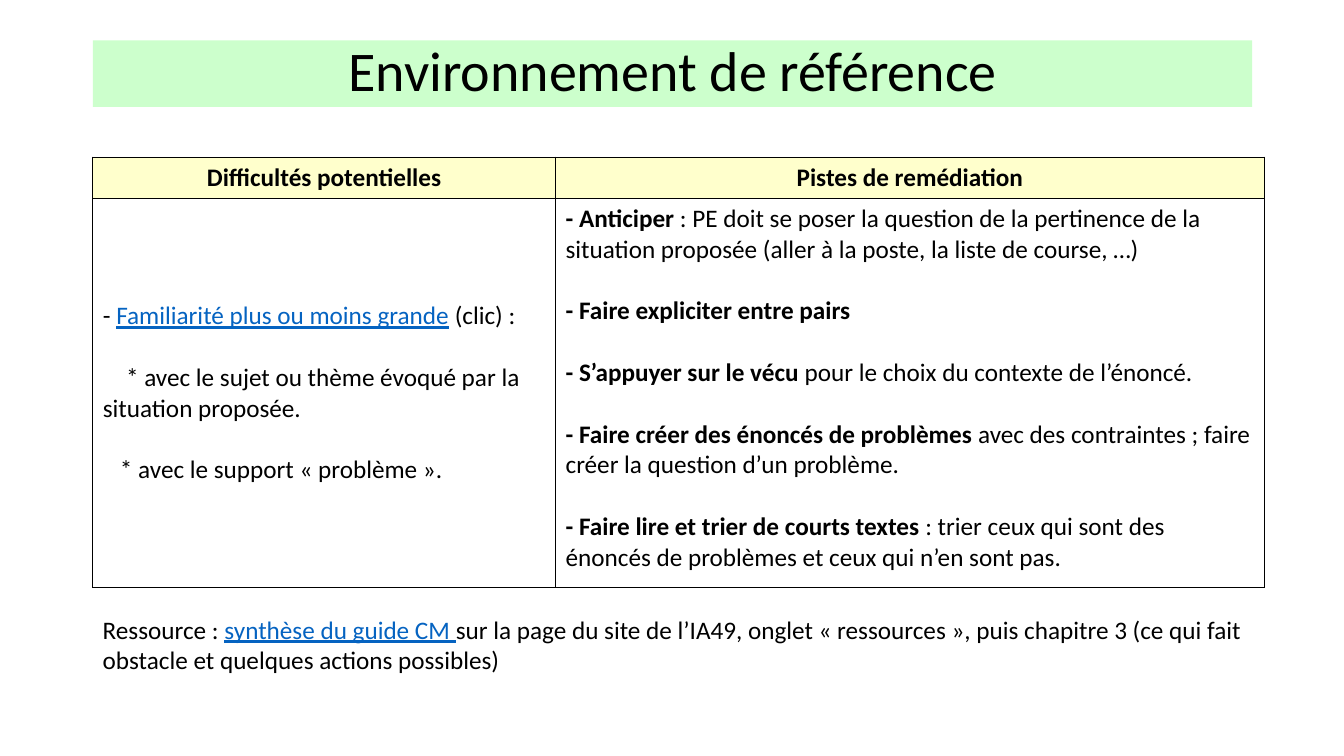
from dataclasses import dataclass

from lxml import etree
from pptx import Presentation
from pptx.dml.color import RGBColor
from pptx.enum.text import MSO_ANCHOR, MSO_AUTO_SIZE, PP_ALIGN
from pptx.oxml.ns import qn
from pptx.util import Inches, Pt

CENTER, LEFT = PP_ALIGN.CENTER, PP_ALIGN.LEFT
MIDDLE, TOP = MSO_ANCHOR.MIDDLE, MSO_ANCHOR.TOP
TITLE_ONLY = 5
COLORS = {"text": "000000", "link": "0563C1", "title": "CCFFCC",
          "header": "FFFFCC", "body": "FFFFFF", "border": "000000"}
FONT = "Calibri"
LEFT_EDGE, WIDTH = 0.92, 11.62
GAP = 22  # points between the items of a cell


@dataclass
class Run:
    text: str
    bold: bool = False
    link: bool = False


@dataclass
class Para:
    runs: list[Run]
    indent: float = 0


@dataclass
class Cell:
    paras: list[Para]
    fill: str = "body"
    align: PP_ALIGN = LEFT
    anchor: MSO_ANCHOR = MIDDLE


def rgb(name: str) -> RGBColor:
    return RGBColor.from_string(COLORS[name])


def header(text: str) -> Cell:
    return Cell([Para([Run(text, bold=True)])], "header", CENTER)


def advice(bold: str, plain: str = "") -> Para:
    return Para([Run(bold, bold=True)] + ([Run(plain)] if plain else []))


def write(tf, paras: list[Para], size: int = 18, align: PP_ALIGN = LEFT) -> None:
    for i, para in enumerate(paras):
        p = tf.add_paragraph() if i else tf.paragraphs[0]
        p.alignment = align
        p.font.name = FONT
        p.space_before = Pt(GAP if i else 0)
        if para.indent:
            p._p.get_or_add_pPr().set("indent", str(Inches(para.indent)))
        for run in para.runs:
            r = p.add_run()
            r.text = run.text
            r.font.size = Pt(size)
            r.font.bold = run.bold
            r.font.underline = run.link
            r.font.color.rgb = rgb("link" if run.link else "text")


def add_borders(cell) -> None:
    tc_pr = cell._tc.get_or_add_tcPr()
    for side in ("lnL", "lnR", "lnT", "lnB"):
        ln = etree.SubElement(tc_pr, qn(f"a:{side}"), w=str(Pt(1)))
        fill = etree.SubElement(ln, qn("a:solidFill"))
        etree.SubElement(fill, qn("a:srgbClr"), val=COLORS["border"])


ROWS = [
    [header("Difficultés potentielles"), header("Pistes de remédiation")],
    [
        Cell([
            Para([Run("- "), Run("Familiarité plus ou moins grande", link=True),
                  Run(" (clic) :")]),
            Para([Run("* avec le sujet ou thème évoqué par la situation proposée.")],
                 indent=0.23),
            Para([Run("* avec le support « problème ».")], indent=0.17),
        ]),
        Cell([
            advice("- Anticiper", " : PE doit se poser la question de la pertinence de la "
                   "situation proposée (aller à la poste, la liste de course, …)"),
            advice("- Faire expliciter entre pairs"),
            advice("- S’appuyer sur le vécu", " pour le choix du contexte de l’énoncé."),
            advice("- Faire créer des énoncés de problèmes",
                   " avec des contraintes ; faire créer la question d’un problème."),
            advice("- Faire lire et trier de courts textes",
                   " : trier ceux qui sont des énoncés de problèmes et ceux qui "
                   "n’en sont pas."),
        ], anchor=TOP),
    ],
]
COL_WIDTHS = [4.59, 7.03]
ROW_HEIGHTS = [0.41, 3.86]
RESOURCE = Para([
    Run("Ressource : "), Run("synthèse du guide CM ", link=True),
    Run("sur la page du site de l’IA49, onglet « ressources », puis chapitre 3 "
        "(ce qui fait obstacle et quelques actions possibles)"),
])


def add_title(s) -> None:
    title = s.shapes.title
    title.left, title.top = Inches(LEFT_EDGE), Inches(0.4)
    title.width, title.height = Inches(11.5), Inches(0.66)
    title.fill.solid()
    title.fill.fore_color.rgb = rgb("title")
    tf = title.text_frame
    tf.auto_size = MSO_AUTO_SIZE.NONE
    tf.vertical_anchor = MIDDLE
    write(tf, [Para([Run("Environnement de référence")])], 40, CENTER)
    tf.paragraphs[0].line_spacing = 0.9


def add_remedies(s) -> None:
    table = s.shapes.add_table(len(ROWS), len(COL_WIDTHS), Inches(LEFT_EDGE), Inches(1.56),
                               Inches(WIDTH), Inches(sum(ROW_HEIGHTS))).table
    table.first_row = table.horz_banding = False
    for column, width in zip(table.columns, COL_WIDTHS):
        column.width = Inches(width)
    for row, height, contents in zip(table.rows, ROW_HEIGHTS, ROWS):
        row.height = Inches(height)
        for cell, content in zip(row.cells, contents):
            add_borders(cell)
            cell.fill.solid()
            cell.fill.fore_color.rgb = rgb(content.fill)
            cell.vertical_anchor = content.anchor
            write(cell.text_frame, content.paras, align=content.align)


def add_resource(s) -> None:
    box = s.shapes.add_textbox(Inches(LEFT_EDGE), Inches(6.04), Inches(WIDTH), Inches(0.71))
    box.text_frame.word_wrap = True
    write(box.text_frame, [RESOURCE])


def main() -> None:
    prs = Presentation()
    prs.slide_width, prs.slide_height = Inches(13.33), Inches(7.5)
    s = prs.slides.add_slide(prs.slide_layouts[TITLE_ONLY])
    # Title band
    add_title(s)
    # Difficulties and remedies
    add_remedies(s)
    # Resource note
    add_resource(s)
    prs.save("out.pptx")


if __name__ == "__main__":
    main()
